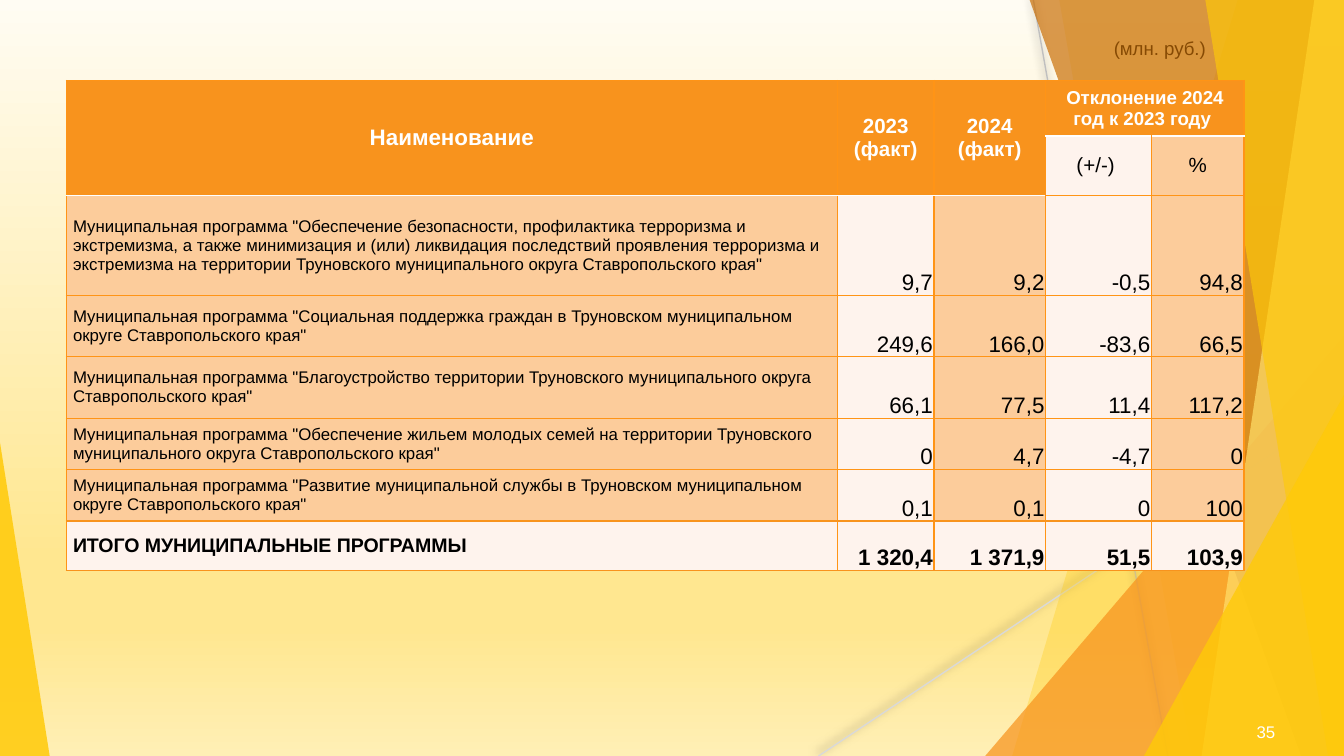
"""Build the slide with the municipal programme spending table."""
from typing import NamedTuple

from lxml.etree import SubElement
from pptx import Presentation
from pptx.dml.color import RGBColor
from pptx.enum.shapes import MSO_CONNECTOR, MSO_SHAPE
from pptx.enum.text import MSO_ANCHOR, PP_ALIGN
from pptx.oxml import parse_xml
from pptx.oxml.ns import nsdecls, qn
from pptx.util import Cm, Pt

WIDTH, HEIGHT = 25.4, 14.29
FONT = "Arial"
COLORS = {
    "gold": "FFCA08", "pale gold": "FFDF6B", "orange": "F8931D", "brown": "CA6F06",
    "border": "FF9416", "peach": "FCCC9B", "cream": "FEF3ED", "white": "FFFFFF",
    "black": "000000", "caption": "864A04", "gray": "BFBFBF", "light gray": "D9D9D9",
}
BACKGROUND_STOPS = [(0, "FFFCF3"), (74, "FFE790"), (83, "FFE790"), (100, "FFEFB5")]


class Ray(NamedTuple):
    color: str
    start: tuple[float, float]
    end: tuple[float, float]


class Band(NamedTuple):
    color: str
    opacity: int
    top: float
    bottom: float


class Corner(NamedTuple):
    color: str
    opacity: int
    left: float
    top: float
    width: float
    apex: float


class Style(NamedTuple):
    size: float
    color: str = "black"
    bold: bool = False
    align: PP_ALIGN = PP_ALIGN.LEFT


class Program(NamedTuple):
    name: str
    values: tuple[str, str, str, str]


RAYS = [Ray("gray", (19.53, 0), (22.07, HEIGHT)), Ray("light gray", (WIDTH, 7.67), (15.47, HEIGHT))]
DECOR = [
    Band("gold", 30, 23.39, 19.13),
    Band("gold", 20, 20.02, 22.53),
    Corner("orange", 72, 18.62, 6.35, 6.78, 1),
    Band("brown", 70, 19.46, 24.59),
    Band("pale gold", 70, 24.84, 22.71),
    Band("gold", 65, 22.78, 25.1),
    Corner("gold", 80, 21.62, 7.47, 3.78, 1),
    Corner("gold", 85, 0, 8.36, 0.94, 0),
]
COLUMNS = [14.58, 1.82, 2.11, 2.0, 1.75]
ROWS = [1.04, 1.11, 1.89, 1.16, 1.16, 0.97, 0.97, 0.93]
PROGRAMS = [
    Program('Муниципальная программа "Обеспечение безопасности, профилактика терроризма и экстремизма, '
            'а также минимизация и (или) ликвидация последствий проявления терроризма и экстремизма '
            'на территории Труновского муниципального округа Ставропольского края"',
            ("9,7", "9,2", "-0,5", "94,8")),
    Program('Муниципальная программа "Социальная поддержка граждан в Труновском муниципальном округе '
            'Ставропольского края"', ("249,6", "166,0", "-83,6", "66,5")),
    Program('Муниципальная программа "Благоустройство территории Труновского муниципального округа '
            'Ставропольского края"', ("66,1", "77,5", "11,4", "117,2")),
    Program('Муниципальная программа "Обеспечение жильем молодых семей на территории Труновского '
            'муниципального округа Ставропольского края"', ("0", "4,7", "-4,7", "0")),
    Program('Муниципальная программа "Развитие муниципальной службы в Труновском муниципальном округе '
            'Ставропольского края"', ("0,1", "0,1", "0", "100")),
    Program("ИТОГО МУНИЦИПАЛЬНЫЕ ПРОГРАММЫ", ("1 320,4", "1 371,9", "51,5", "103,9")),
]


def rgb(name: str) -> RGBColor:
    return RGBColor.from_string(COLORS[name])


def paint_background(page) -> None:
    fill = page.background.fill
    fill.gradient()
    fill.gradient_angle = 270
    stops = page.element.find(".//" + qn("a:gsLst"))
    for stop in list(stops):
        stops.remove(stop)
    for position, color in BACKGROUND_STOPS:
        stop = SubElement(stops, qn("a:gs"), pos=str(position * 1000))
        SubElement(stop, qn("a:srgbClr"), val=color)


def draw_ray(page, ray: Ray) -> None:
    line = page.shapes.add_connector(MSO_CONNECTOR.STRAIGHT, *map(Cm, ray.start + ray.end))
    line.line.color.rgb = rgb(ray.color)
    line.line.width = Pt(0.75)
    line.element.spPr.append(parse_xml(
        f'<a:effectLst {nsdecls("a")}><a:outerShdw blurRad="{Pt(5)}" dist="{Pt(2)}" dir="14700000">'
        '<a:srgbClr val="000000"><a:alpha val="50000"/></a:srgbClr></a:outerShdw></a:effectLst>'))


def draw_decor(page, part: Band | Corner) -> None:
    if isinstance(part, Band):
        points = [(WIDTH, 0), (WIDTH, HEIGHT), (part.bottom, HEIGHT)]
        builder = page.shapes.build_freeform(Cm(part.top), 0, scale=1.0)
        builder.add_line_segments([(Cm(x), Cm(y)) for x, y in points])
        shape = builder.convert_to_shape()
    else:
        shape = page.shapes.add_shape(MSO_SHAPE.ISOSCELES_TRIANGLE, Cm(part.left), Cm(part.top),
                                      Cm(part.width), Cm(HEIGHT - part.top))
        shape.adjustments[0] = part.apex
    shape.shadow.inherit = False
    shape.line.fill.background()
    shape.fill.solid()
    shape.fill.fore_color.rgb = rgb(part.color)
    color = shape.element.spPr.find(f"{qn('a:solidFill')}/{qn('a:srgbClr')}")
    SubElement(color, qn("a:alpha"), val=str(part.opacity * 1000))


def write(frame, lines: list[str], style: Style) -> None:
    for index, line in enumerate(lines):
        para = frame.add_paragraph() if index else frame.paragraphs[0]
        para.alignment = style.align
        span = para.add_run()
        span.text = line
        span.font.name = FONT
        span.font.size = Pt(style.size)
        span.font.bold = style.bold
        span.font.color.rgb = rgb(style.color)


def draw_label(page, text: str, area: tuple[float, ...], style: Style, wrap: bool) -> None:
    frame = page.shapes.add_textbox(*map(Cm, area)).text_frame
    frame.word_wrap = wrap
    frame.vertical_anchor = MSO_ANCHOR.MIDDLE
    write(frame, [text], style)


def format_cell(cell, fill: str, across: tuple[str, float], bottom: tuple[str, float]) -> None:
    cell.fill.solid()
    cell.fill.fore_color.rgb = rgb(fill)
    side = ("border", 0.75)
    edges = {"lnL": side, "lnR": side, "lnT": across, "lnB": bottom}
    for index, (tag, (color, width)) in enumerate(edges.items()):
        cell._tc.tcPr.insert(index, parse_xml(
            f'<a:{tag} {nsdecls("a")} w="{Pt(width)}"><a:solidFill>'
            f'<a:srgbClr val="{COLORS[color]}"/></a:solidFill></a:{tag}>'))


def fill_cell(cell, lines: list[str], style: Style, numeric: bool = False) -> None:
    side = Cm(0.02 if numeric else 0.13)
    cell.margin_left = cell.margin_right = cell.margin_top = side
    cell.margin_bottom = 0 if numeric else side
    cell.vertical_anchor = MSO_ANCHOR.BOTTOM if numeric else MSO_ANCHOR.MIDDLE
    write(cell.text_frame, lines, style)


def draw_table(page) -> None:
    table = page.shapes.add_table(len(ROWS), len(COLUMNS), Cm(1.25), Cm(1.52),
                                  Cm(sum(COLUMNS)), Cm(sum(ROWS))).table
    table.first_row = table.horz_banding = False
    for column, width in zip(table.columns, COLUMNS):
        column.width = Cm(width)
    for row, height in zip(table.rows, ROWS):
        row.height = Cm(height)

    last = len(ROWS) - 1
    thin, white, thick = ("border", 0.75), ("white", 1), ("orange", 1)
    for row in range(len(ROWS)):
        for column in range(len(COLUMNS)):
            header = row == 0 or (row == 1 and column < 3)
            shaded = column in (2, 4) or (column == 0 and row < last)
            fill = "orange" if header else "peach" if shaded and row < last else "cream"
            above = thick if row == last else white if row in (1, 2) and (row == 1 or column < 3) else thin
            below = thick if row >= last - 1 else white if header else thin
            format_cell(table.cell(row, column), fill, above, below)
    for column in range(3):
        table.cell(0, column).merge(table.cell(1, column))
    table.cell(0, 3).merge(table.cell(0, 4))

    center = PP_ALIGN.CENTER
    headings = [(["Наименование"], 12), (["2023", "(факт)"], 11), (["2024", "(факт)"], 11),
                (["Отклонение 2024 год к 2023 году "], 10)]
    for column, (lines, size) in enumerate(headings):
        fill_cell(table.cell(0, column), lines, Style(size, "white", True, center))
    for column, text in enumerate(["(+/-) ", "%"], start=3):
        fill_cell(table.cell(1, column), [text], Style(11, align=center))
    for row, program in enumerate(PROGRAMS, start=2):
        total = row == last
        fill_cell(table.cell(row, 0), [program.name], Style(10.5 if total else 9, bold=total))
        for column, value in enumerate(program.values, start=1):
            fill_cell(table.cell(row, column), [value], Style(12, bold=total, align=PP_ALIGN.RIGHT), True)


def main() -> None:
    deck = Presentation()
    deck.slide_width, deck.slide_height = Cm(WIDTH), Cm(HEIGHT)
    page = deck.slides.add_slide(deck.slide_layouts[6])
    paint_background(page)
    for ray in RAYS:
        draw_ray(page, ray)
    for part in DECOR:
        draw_decor(page, part)
    draw_table(page)
    draw_label(page, "(млн. руб.)", (20.8, 0.56, 2.29, 0.69), Style(10, "caption"), False)
    draw_label(page, "35", (23.5, 13.46, 1.42, 0.76), Style(9, "white"), True)
    deck.save("out.pptx")


if __name__ == "__main__":
    main()
